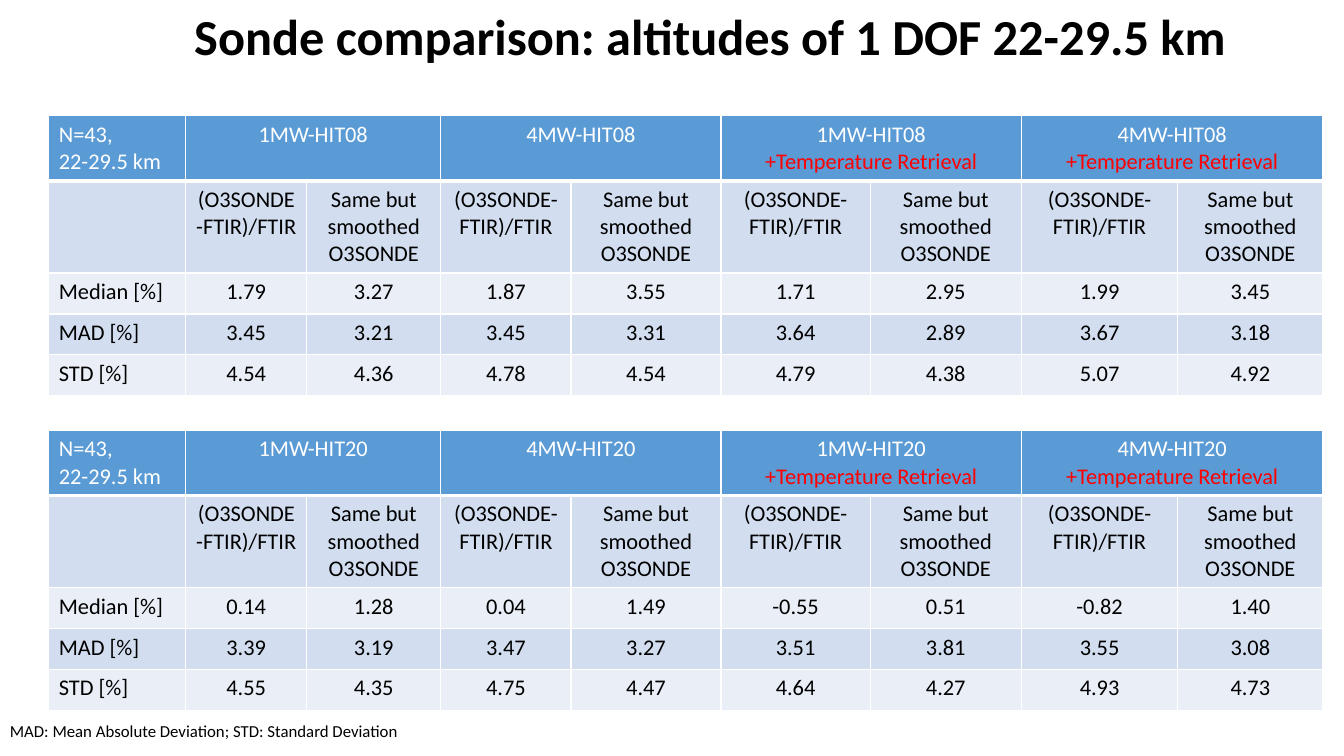
from lxml import etree
from pptx import Presentation
from pptx.dml.color import RGBColor
from pptx.enum.text import MSO_ANCHOR, PP_ALIGN
from pptx.oxml.ns import qn
from pptx.util import Cm, Pt

LEFT, CENTER, RIGHT = PP_ALIGN.LEFT, PP_ALIGN.CENTER, PP_ALIGN.RIGHT
TOP = MSO_ANCHOR.TOP
FONT = "Calibri"
COLORS = {
    "header": "5B9BD5",
    "dark_band": "D2DEEF",
    "light_band": "EAEFF7",
    "white": "FFFFFF",
    "black": "000000",
    "red": "FF0000",
}
COLUMN_WIDTHS = [3.45, 3.05, 3.38, 3.28, 3.78, 3.76, 3.81, 3.94, 3.66]
ROW_HEIGHTS = [1.62, 2.32, 1.03, 1.03, 1.03]
ROW_FILLS = ["header", "dark_band", "light_band", "dark_band", "light_band"]
SUBHEADERS = ["", *["(O3SONDE-FTIR)/FTIR", "Same but smoothed O3SONDE"] * 4]
COMPARISONS = [
    ("HIT08", 2.92, [
        ["Median [%]", "1.79", "3.27", "1.87", "3.55", "1.71", "2.95", "1.99", "3.45"],
        ["MAD [%]", "3.45", "3.21", "3.45", "3.31", "3.64", "2.89", "3.67", "3.18"],
        ["STD [%]", "4.54", "4.36", "4.78", "4.54", "4.79", "4.38", "5.07", "4.92"],
    ]),
    ("HIT20", 10.85, [
        ["Median [%]", "0.14", "1.28", "0.04", "1.49", "-0.55", "0.51", "-0.82", "1.40"],
        ["MAD [%]", "3.39", "3.19", "3.47", "3.27", "3.51", "3.81", "3.55", "3.08"],
        ["STD [%]", "4.55", "4.35", "4.75", "4.47", "4.64", "4.27", "4.93", "4.73"],
    ]),
]


def add_text(paragraph, text, size, color, alignment=LEFT, bold=False):
    paragraph.alignment = alignment
    run = paragraph.add_run()
    run.text = text
    run.font.name = FONT
    run.font.size = Pt(size)
    run.font.bold = bold
    run.font.color.rgb = RGBColor.from_string(COLORS[color])


def style_cell(cell, fill, bottom_width):
    properties = cell._tc.get_or_add_tcPr()
    for side, width in (("lnL", 1), ("lnR", 1), ("lnT", 1), ("lnB", bottom_width)):
        line = etree.SubElement(properties, qn(f"a:{side}"), w=str(Pt(width)))
        solid = etree.SubElement(line, qn("a:solidFill"))
        etree.SubElement(solid, qn("a:srgbClr"), val=COLORS["white"])
    cell.fill.solid()
    cell.fill.fore_color.rgb = RGBColor.from_string(COLORS[fill])


presentation = Presentation()
presentation.slide_width = Cm(33.87)
presentation.slide_height = Cm(19.05)
slide = presentation.slides.add_slide(presentation.slide_layouts[5])

title = slide.shapes.title
title.left, title.top, title.width, title.height = Cm(2.59), Cm(0), Cm(28.58), Cm(1.8)
title.text_frame.vertical_anchor = TOP
add_text(title.text_frame.paragraphs[0], "Sonde comparison: altitudes of 1 DOF 22-29.5 km",
         36, "black", RIGHT, True)

for database, top, statistics in COMPARISONS:
    table = slide.shapes.add_table(
        len(ROW_HEIGHTS), len(COLUMN_WIDTHS), Cm(1.23), Cm(top),
        Cm(sum(COLUMN_WIDTHS)), Cm(sum(ROW_HEIGHTS))).table
    for column, width in zip(table.columns, COLUMN_WIDTHS):
        column.width = Cm(width)
    for row, height, fill in zip(table.rows, ROW_HEIGHTS, ROW_FILLS):
        row.height = Cm(height)
        for cell in row.cells:
            style_cell(cell, fill, 3 if fill == "header" else 1)

    corner = table.cell(0, 0).text_frame
    add_text(corner.paragraphs[0], "N=43,", 16, "white")
    add_text(corner.add_paragraph(), "22-29.5 km", 16, "white")

    for index, windows in enumerate(["1MW", "4MW", "1MW", "4MW"]):
        first = 1 + 2 * index
        heading = table.cell(0, first)
        heading.merge(table.cell(0, first + 1))
        paragraph = heading.text_frame.paragraphs[0]
        add_text(paragraph, f"{windows}-{database}", 16, "white", CENTER)
        if index >= 2:
            paragraph.add_line_break()
            add_text(paragraph, "+Temperature Retrieval", 16, "red", CENTER)

    for row_index, values in enumerate([SUBHEADERS, *statistics], start=1):
        for column_index, value in enumerate(values):
            if value:
                paragraph = table.cell(row_index, column_index).text_frame.paragraphs[0]
                add_text(paragraph, value, 16, "black", CENTER if column_index else LEFT)

footnote = slide.shapes.add_textbox(Cm(0), Cm(18.03), Cm(10.39), Cm(0.77))
footnote.text_frame.word_wrap = False
add_text(footnote.text_frame.paragraphs[0],
         "MAD: Mean Absolute Deviation; STD: Standard Deviation", 12, "black")

presentation.save("out.pptx")
